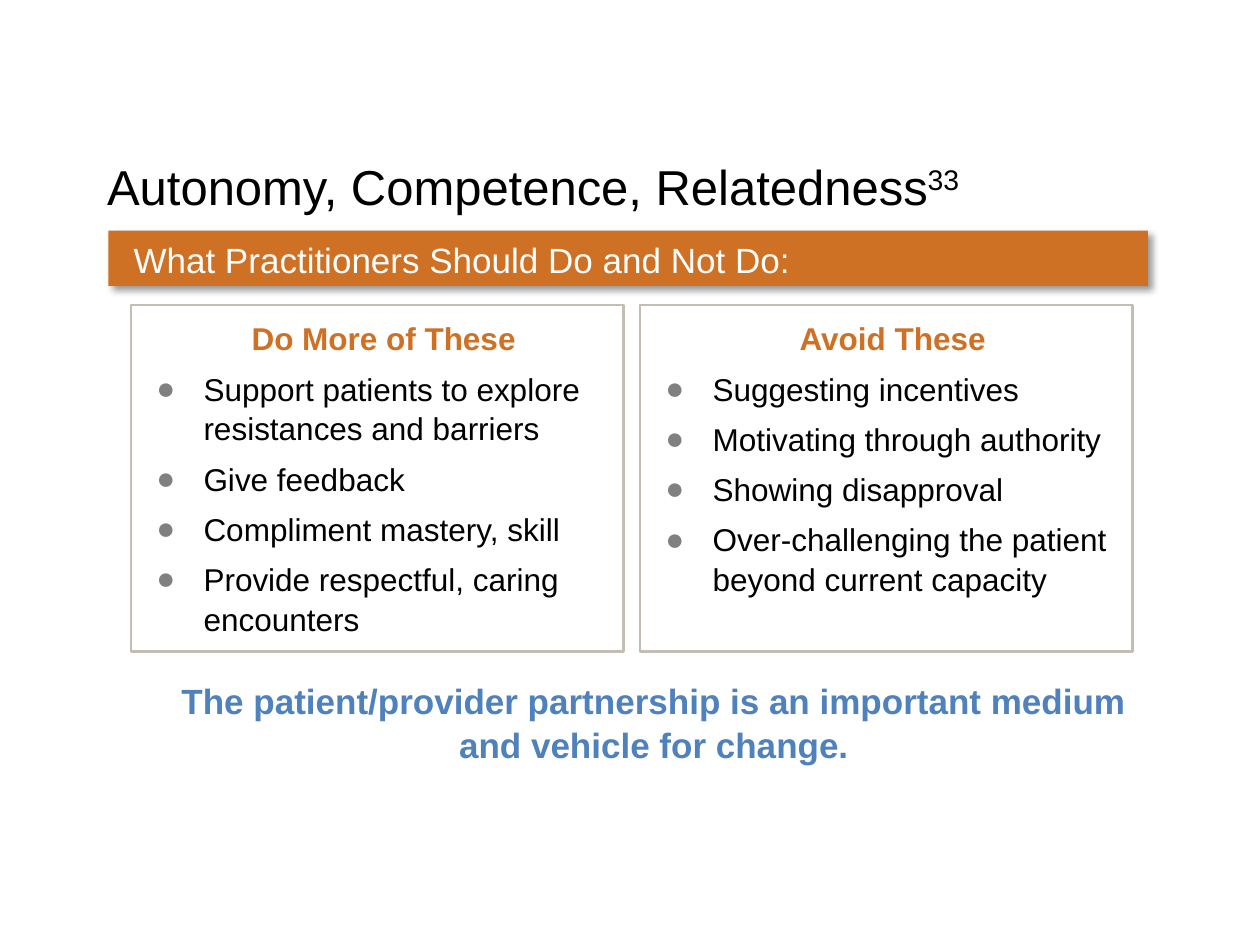
from lxml import etree
from pptx import Presentation
from pptx.dml.color import RGBColor
from pptx.enum.shapes import MSO_SHAPE
from pptx.enum.text import MSO_ANCHOR, MSO_AUTO_SIZE, PP_ALIGN
from pptx.oxml.ns import qn
from pptx.util import Pt

LEFT, CENTER = PP_ALIGN.LEFT, PP_ALIGN.CENTER
TOP, MIDDLE = MSO_ANCHOR.TOP, MSO_ANCHOR.MIDDLE
FIXED, GROW = MSO_AUTO_SIZE.NONE, MSO_AUTO_SIZE.SHAPE_TO_FIT_TEXT
RECT = MSO_SHAPE.RECTANGLE

BLACK = RGBColor(0x00, 0x00, 0x00)
WHITE = RGBColor(0xFF, 0xFF, 0xFF)
ORANGE = RGBColor(0xCE, 0x71, 0x24)
BLUE = RGBColor(0x4F, 0x81, 0xBD)
GRAY = RGBColor(0x80, 0x80, 0x80)
TAN = RGBColor(0xC4, 0xBD, 0xB4)

FONT = "Arial"
INDENT = 27
GAP = 9.4

LISTS = [
    ("Do More of These", [
        "Support patients to explore resistances and barriers",
        "Give feedback",
        "Compliment mastery, skill",
        "Provide respectful, caring encounters",
    ]),
    ("Avoid These", [
        "Suggesting incentives",
        "Motivating through authority",
        "Showing disapproval",
        "Over-challenging the patient beyond current capacity",
    ]),
]


def apply(target, values):
    for name, value in values.items():
        setattr(target, name, value)


def place(shape, box):
    names = ("left", "top", "width", "height")
    apply(shape, {name: Pt(value) for name, value in zip(names, box)})


def frame(shape, anchor=TOP, size=FIXED, left=7.2, edge=3.6):
    text = shape.text_frame
    apply(text, {
        "word_wrap": True, "auto_size": size, "vertical_anchor": anchor,
        "margin_left": Pt(left), "margin_right": Pt(7.2),
        "margin_top": Pt(edge), "margin_bottom": Pt(edge),
    })
    return text


def write(para, text, size, color, bold=False, align=LEFT, before=0):
    apply(para, {"alignment": align, "line_spacing": 1.05,
                 "space_before": Pt(before), "space_after": Pt(0)})
    run = para.add_run()
    run.text = text
    apply(run.font, {"name": FONT, "size": Pt(size), "bold": bold})
    run.font.color.rgb = color
    return run


def bullet(para, mark=None):
    props = para._p.get_or_add_pPr()
    indent = Pt(INDENT) if mark else 0
    props.set("marL", str(indent))
    props.set("indent", str(-indent))
    if not mark:
        etree.SubElement(props, qn("a:buNone"))
        return
    color = etree.SubElement(props, qn("a:buClr"))
    etree.SubElement(color, qn("a:srgbClr"), val=str(GRAY))
    etree.SubElement(props, qn("a:buFont"), typeface=FONT)
    etree.SubElement(props, qn("a:buChar"), char=mark)


def shade(shape):
    effects = etree.SubElement(shape._element.spPr, qn("a:effectLst"))
    outer = etree.SubElement(effects, qn("a:outerShdw"), blurRad=str(Pt(4)),
                             dist=str(Pt(3)), dir="2700000", algn="tl",
                             rotWithShape="0")
    color = etree.SubElement(outer, qn("a:srgbClr"), val=str(BLACK))
    etree.SubElement(color, qn("a:alpha"), val="40000")


def add_title(slide, box):
    title = slide.shapes.title
    place(title, box)
    para = frame(title).paragraphs[0]
    write(para, "Autonomy, Competence, Relatedness", 28, BLACK)
    note = write(para, "33", 28, BLACK)
    note._r.get_or_add_rPr().set("baseline", "30000")


def add_list(panel, box, head, items):
    place(panel, box)
    panel.line.color.rgb = TAN
    panel.line.width = Pt(1.5)
    text = frame(panel, left=14.4, edge=7.2)
    para = text.paragraphs[0]
    bullet(para)
    write(para, head, 18, ORANGE, bold=True, align=CENTER)
    for item in items:
        para = text.add_paragraph()
        bullet(para, "●")
        write(para, item, 18, BLACK, before=6)


def add_lists(slide, box):
    left, top, width, height = box
    wide = (width - GAP) / 2
    for i, (head, items) in enumerate(LISTS):
        spot = (left + i * (wide + GAP), top, wide, height)
        add_list(slide.placeholders[i + 1], spot, head, items)


def add_close(slide, box):
    label = slide.shapes.add_textbox(*map(Pt, box))
    para = frame(label, size=GROW).paragraphs[0]
    write(para, "The patient/provider partnership is an important medium "
          "and vehicle for change.", 20, BLUE, bold=True, align=CENTER)


def add_banner(slide, box):
    bar = slide.shapes.add_shape(RECT, *map(Pt, box))
    bar.fill.solid()
    bar.fill.fore_color.rgb = ORANGE
    bar.line.fill.background()
    shade(bar)
    para = frame(bar, MIDDLE, GROW, left=14.4).paragraphs[0]
    write(para, "What Practitioners Should Do and Not Do:", 20, WHITE)


def main():
    deck = Presentation()
    apply(deck, {"slide_width": Pt(720), "slide_height": Pt(540)})
    slide = deck.slides.add_slide(deck.slide_layouts[3])  # two content
    add_title(slide, (54, 84.24, 630, 66.24))
    add_lists(slide, (74.88, 174.24, 572.4, 198))
    add_close(slide, (87.84, 383.76, 571.68, 55.44))
    add_banner(slide, (61.92, 131.76, 594, 31.68))
    deck.save("out.pptx")


if __name__ == "__main__":
    main()
